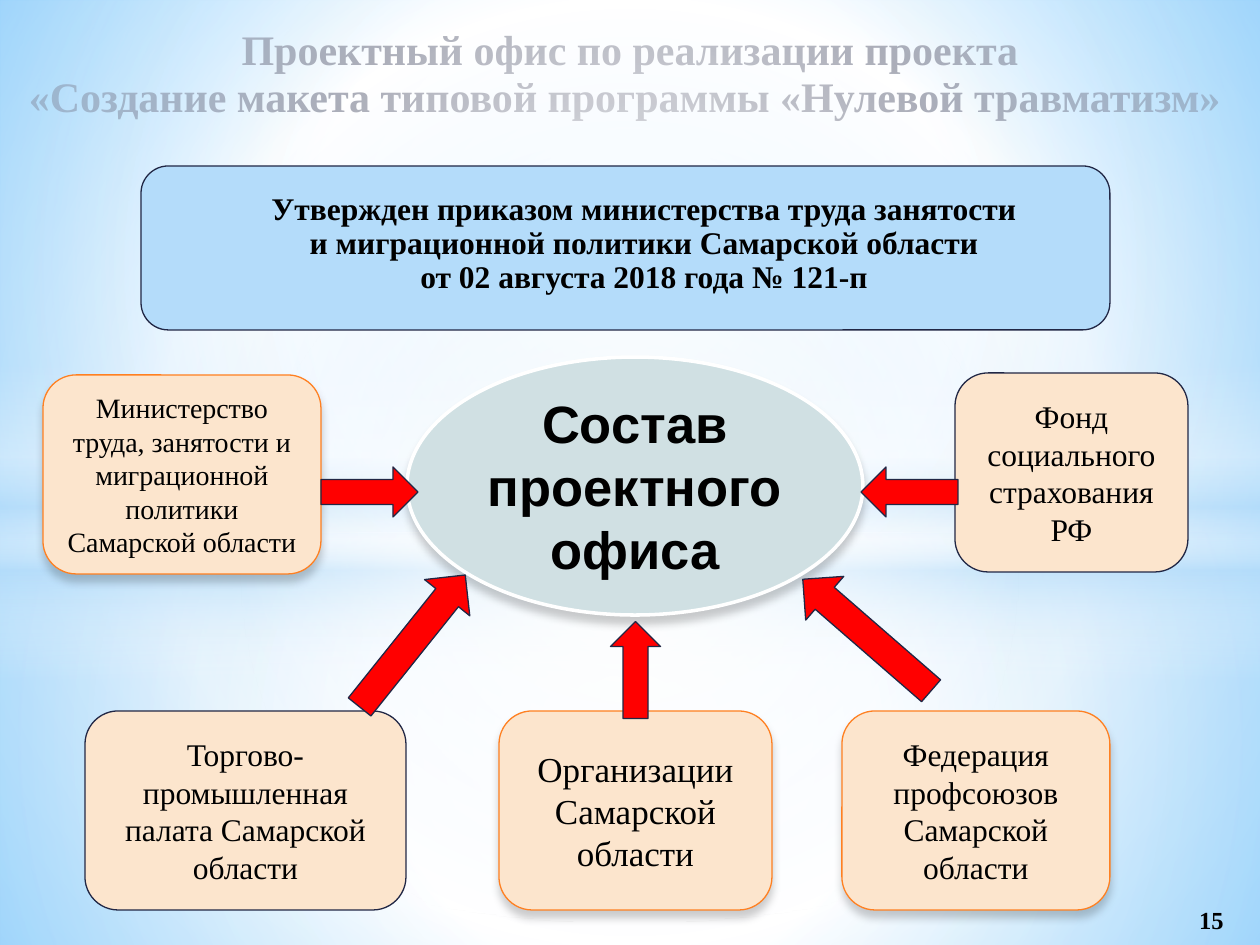
from pptx import Presentation
from pptx.dml.color import RGBColor
from pptx.enum.shapes import MSO_SHAPE
from pptx.enum.text import MSO_ANCHOR, MSO_AUTO_SIZE, PP_ALIGN
from pptx.oxml import parse_xml
from pptx.oxml.ns import nsdecls, qn
from pptx.util import Pt

PX = 914400 // 126
NAVY = RGBColor(0x21, 0x27, 0x45)
ORANGE = RGBColor(0xFF, 0x80, 0x21)
CREAM = RGBColor(0xFC, 0xE5, 0xCD)
SKY = RGBColor(0xB4, 0xDC, 0xFA)
MIST = RGBColor(0xD0, 0xE0, 0xE3)
RED = RGBColor(0xFF, 0x00, 0x00)
WHITE = RGBColor(0xFF, 0xFF, 0xFF)
BLACK = RGBColor(0x00, 0x00, 0x00)
RECT, OVAL, ROUND = MSO_SHAPE.RECTANGLE, MSO_SHAPE.OVAL, MSO_SHAPE.ROUNDED_RECTANGLE
RIGHT, LEFT = MSO_SHAPE.RIGHT_ARROW, MSO_SHAPE.LEFT_ARROW
TOP, MIDDLE = MSO_ANCHOR.TOP, MSO_ANCHOR.MIDDLE
SERIF = "Times New Roman"


def set_gradient(element, stops, linear=False):
    """Swap the first solid fill under element for stops of (position, colour, opacity)."""
    gs = "".join(
        f'<a:gs pos="{pos * 1000}"><a:srgbClr val="{color}">'
        f'<a:alpha val="{opacity * 1000}"/></a:srgbClr></a:gs>'
        for pos, color, opacity in stops)
    way = ('<a:lin ang="5400000" scaled="0"/>' if linear else
           '<a:path path="circle"><a:fillToRect l="50000" t="50000" r="50000" b="50000"/></a:path>')
    solid = element.find(".//" + qn("a:solidFill"))
    solid.getparent().replace(solid, parse_xml(
        f'<a:gradFill {nsdecls("a")} rotWithShape="1"><a:gsLst>{gs}</a:gsLst>{way}</a:gradFill>'))


def write(shape, text, size, color=BLACK, bold=False, font=SERIF, anchor=MIDDLE,
          spacing=1.0, inset=13):
    tf = shape.text_frame
    tf.word_wrap = True
    tf.auto_size = MSO_AUTO_SIZE.NONE
    tf.vertical_anchor = anchor
    tf.margin_left = tf.margin_right = 13 * PX
    tf.margin_top = tf.margin_bottom = inset * PX
    tf.text = text
    for p in tf.paragraphs:
        p.alignment = PP_ALIGN.CENTER
        p.line_spacing = spacing
        p.font.name, p.font.size, p.font.bold = font, Pt(size), bold
        p.font.color.rgb = color


prs = Presentation()
prs.slide_width, prs.slide_height = 1260 * PX, 945 * PX
s = prs.slides.add_slide(prs.slide_layouts[5])

# Background
s.background.fill.solid()
set_gradient(s.element, [(0, "99D4FE", 100), (60, WHITE, 100), (100, "54BDFF", 100)])
glows = [
    (RECT, 0, 533, 1260, 412, [(0, WHITE, 91), (37, WHITE, 76), (100, SKY, 79)], False),
    (RECT, 0, 0, 1260, 533, [(0, WHITE, 89), (48, WHITE, 62), (100, SKY, 79)], False),
    (RECT, 0, 365, 1260, 315, [(0, WHITE, 0), (29, WHITE, 30), (45, SKY, 40),
                               (55, WHITE, 26), (65, SKY, 60), (100, WHITE, 0)], True),
    (OVAL, 0, 220, 1260, 703, [(0, WHITE, 100), (54, WHITE, 0), (100, WHITE, 0)], False),
]
for kind, x, y, w, h, stops, linear in glows:
    sp = s.shapes.add_shape(kind, x * PX, y * PX, w * PX, h * PX)
    sp.shadow.inherit = False
    sp.line.fill.background()
    sp.fill.solid()
    set_gradient(sp._element.spPr, stops, linear)

# Title
title = s.shapes.title
title.left, title.top, title.width, title.height = 0, 27 * PX, 1260 * PX, 110 * PX
write(title, "Проектный офис по реализации проекта\n"
      "«Создание макета типовой программы «Нулевой травматизм» ",
      24, NAVY, True, anchor=TOP, spacing=0.8, inset=6)
title.text_frame.paragraphs[1].space_before = Pt(4)

# Boxes: kind, left, top, width, height, fill, line, line width, shadow, text, size
boxes = [
    (ROUND, 43, 375, 278, 199, CREAM, ORANGE, 0.75, True,
     "Министерство труда, занятости и миграционной политики Самарской области", 16),
    (ROUND, 499, 711, 273, 199, CREAM, ORANGE, 0.75, True,
     "Организации Самарской области", 20),
    (ROUND, 842, 711, 268, 199, CREAM, ORANGE, 0.75, True,
     "Федерация профсоюзов Самарской области", 18),
    (ROUND, 141, 166, 969, 164, SKY, NAVY, 0.75, False, "", 18),
    (OVAL, 407, 357, 456, 258, MIST, WHITE, 2, True, "Состав проектного офиса", 30),
    (ROUND, 955, 373, 233, 199, CREAM, NAVY, 0.75, False,
     "Фонд социального страхования РФ", 18),
    (ROUND, 85, 711, 321, 199, CREAM, NAVY, 0.75, False,
     "Торгово-\nпромышленная палата Самарской области", 18),
]
for kind, x, y, w, h, fill, line, width, shadow, text, size in boxes:
    sp = s.shapes.add_shape(kind, x * PX, y * PX, w * PX, h * PX)
    sp.fill.solid()
    sp.fill.fore_color.rgb = fill
    sp.line.color.rgb = line
    sp.line.width = Pt(width)
    sp.shadow.inherit = False
    if shadow:
        sp._element.spPr.find(qn("a:effectLst")).append(parse_xml(
            f'<a:outerShdw {nsdecls("a")} blurRad="{Pt(5)}" dist="{Pt(4)}" dir="5400000"'
            ' rotWithShape="0"><a:srgbClr val="000000"><a:alpha val="20000"/></a:srgbClr>'
            '</a:outerShdw>'))
    if text:
        oval = kind == OVAL
        write(sp, text, size, bold=oval, font="Arial" if oval else SERIF, inset=6)

order = s.shapes.add_textbox(210 * PX, 180 * PX, 876 * PX, 137 * PX)
write(order, "Утвержден приказом министерства труда занятости \v"
      "и миграционной политики Самарской области \vот 02 августа 2018 года № 121-п ",
      18, bold=True, anchor=TOP, spacing=0.9)
number = s.shapes.add_textbox(1163 * PX, 895 * PX, 97 * PX, 50 * PX)
write(number, "15", 14, bold=True, inset=6)

# Arrows pointing to the oval
arrows = [
    (RIGHT, 321, 467, 97, 50, 0),
    (LEFT, 861, 467, 97, 50, 0),
    (RIGHT, 328, 612, 169, 58, 308.7),
    (RIGHT, 782, 606, 170, 58, 221),
    (LEFT, 587, 645, 97, 50, 90),
]
for kind, x, y, w, h, angle in arrows:
    sp = s.shapes.add_shape(kind, x * PX, y * PX, w * PX, h * PX)
    sp.rotation = angle
    sp.shadow.inherit = False
    sp.fill.solid()
    sp.fill.fore_color.rgb = RED
    sp.line.color.rgb = NAVY
    sp.line.width = Pt(0.75)

prs.save("out.pptx")
